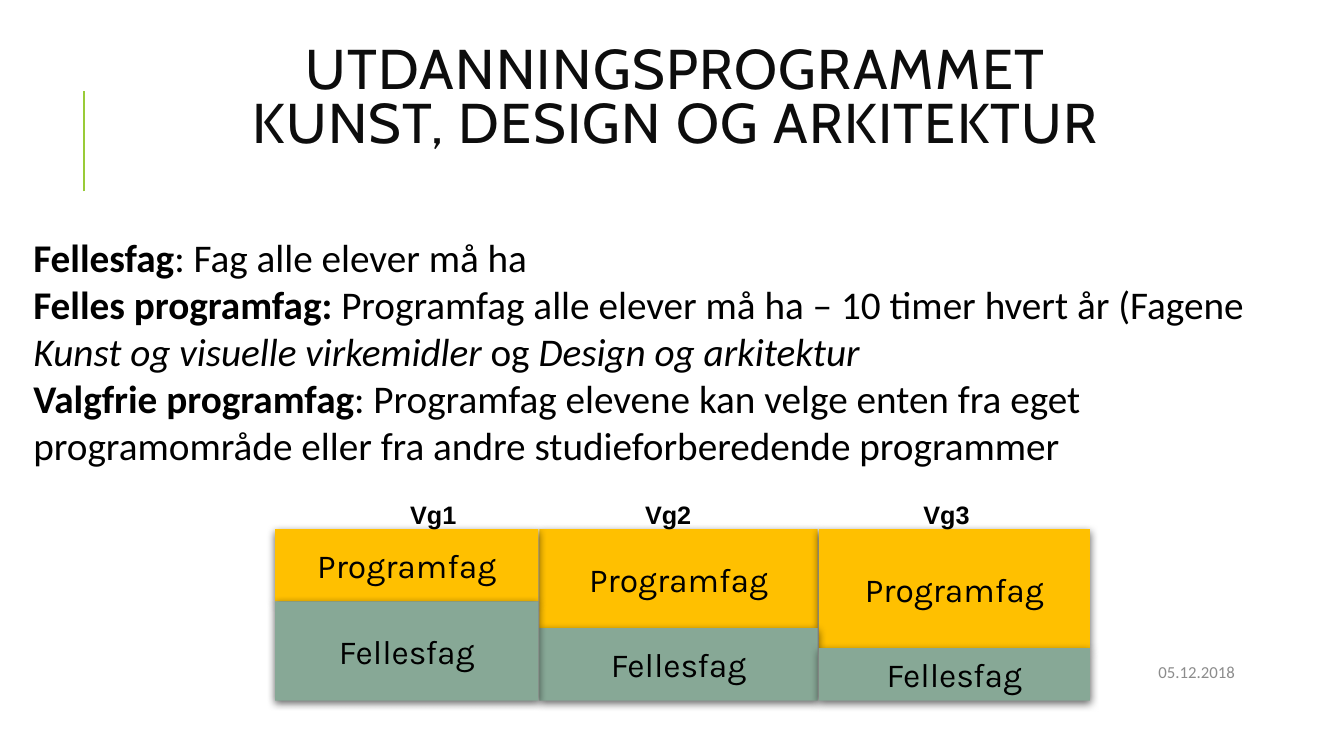
from dataclasses import dataclass

from lxml import etree
from pptx import Presentation
from pptx import util as u
from pptx.dml.color import RGBColor
from pptx.enum import shapes, text
from pptx.oxml import ns


@dataclass(frozen=True)
class Theme:
    black: str = "000000"
    title_ink: str = "0D0D0D"
    date_ink: str = "8C8C8C"
    accent: str = "99CB38"
    programme: str = "FFC000"
    common: str = "87A896"
    title_size: int = 40
    body_size: int = 28
    block_size: int = 24
    label_size: int = 18
    date_size: int = 12
    title_font: str = "Cabin"
    body_font: str = "Calibri"
    block_font: str = "Karla"
    label_font: str = "Arial"


@dataclass(frozen=True)
class Area:
    """A frame in percent of the slide's width and height."""
    left: float
    top: float
    width: float
    height: float


@dataclass(frozen=True)
class Year:
    """A school year: its column, its label and where its two blocks meet."""
    name: str
    left: float
    width: float
    split: float
    label_left: float


@dataclass(frozen=True)
class Piece:
    words: str
    bold: bool = False
    italic: bool = False


THEME = Theme()
SLIDE_WIDTH, SLIDE_HEIGHT = u.Inches(13.33), u.Inches(7.5)
BLOCKS_TOP, BLOCKS_BOTTOM = 70, 92.67

# Later years overlap earlier ones, and the first year lies on top
YEARS = [
    Year("Vg2", 40.14, 20.7, 83.07, 47.26),
    Year("Vg3", 60.92, 20.18, 85.73, 67.97),
    Year("Vg1", 20.48, 19.58, 79.55, 29.78),
]

DEFINITIONS = [
    [Piece("Fellesfag", bold=True), Piece(": Fag alle elever må ha")],
    [
        Piece("Felles programfag: ", bold=True),
        Piece("Programfag alle elever må ha – 10 timer hvert år (Fagene "),
        Piece("Kunst og visuelle virkemidler ", italic=True),
        Piece("og "),
        Piece("Design og arkitektur", italic=True),
    ],
    [
        Piece("Valgfrie programfag", bold=True),
        Piece(": Programfag elevene kan velge enten fra eget programområde "
              "eller fra andre studieforberedende programmer"),
    ],
]


def across(percent: float) -> int:
    return round(SLIDE_WIDTH * percent / 100)


def down(percent: float) -> int:
    return round(SLIDE_HEIGHT * percent / 100)


def frame(area: Area) -> tuple[int, int, int, int]:
    return across(area.left), down(area.top), across(area.width), down(area.height)


def place(box, area: Area) -> None:
    box.left, box.top, box.width, box.height = frame(area)


def style(font, name: str, size: int, ink: str, bold: bool = False, italic: bool = False) -> None:
    font.name, font.size = name, u.Pt(size)
    font.bold, font.italic = bold, italic
    font.color.rgb = RGBColor.from_string(ink)


def add_effects(properties, shadow: bool) -> None:
    effects = etree.SubElement(properties, ns.qn("a:effectLst"))
    if shadow:
        outer = etree.SubElement(effects, ns.qn("a:outerShdw"), blurRad=str(u.Pt(6)),
                                 dist=str(u.Pt(2)), dir="5400000", rotWithShape="0")
        colour = etree.SubElement(outer, ns.qn("a:srgbClr"), val=THEME.black)
        etree.SubElement(colour, ns.qn("a:alpha"), val="60000")


def add_accent(page) -> None:
    accent = page.shapes.add_connector(shapes.MSO_CONNECTOR.STRAIGHT, across(6.23),
                                       down(25.33), across(6.23), down(12))
    accent.line.color.rgb = RGBColor.from_string(THEME.accent)
    accent.line.width = u.Pt(1.5)
    add_effects(accent._element.spPr, shadow=False)


def add_label(page, words: str, area: Area, name: str, size: int, ink: str,
              bold: bool = False, wrap: bool = True) -> None:
    box = page.shapes.add_textbox(*frame(area))
    box.text_frame.word_wrap = wrap
    box.text_frame.vertical_anchor = text.MSO_ANCHOR.MIDDLE if wrap else text.MSO_ANCHOR.TOP
    box.text_frame.text = words
    style(box.text_frame.paragraphs[0].runs[0].font, name, size, ink, bold)


def add_block(page, words: str, area: Area, fill: str) -> None:
    block = page.shapes.add_shape(shapes.MSO_SHAPE.RECTANGLE, *frame(area))
    block.fill.solid()
    block.fill.fore_color.rgb = RGBColor.from_string(fill)
    block.line.fill.background()
    add_effects(block._element.spPr, shadow=True)
    block.text_frame.text = words
    block.text_frame.vertical_anchor = text.MSO_ANCHOR.MIDDLE
    para = block.text_frame.paragraphs[0]
    para.alignment = text.PP_ALIGN.CENTER
    style(para.runs[0].font, THEME.block_font, THEME.block_size, THEME.black)


def fill_title(title) -> None:
    place(title, Area(14.55, 6.93, 71.49, 12.67))
    title.text_frame.text = "UTDANNINGSPROGRAMMET KUNST, DESIGN OG ARKITEKTUR"
    title.text_frame.auto_size = text.MSO_AUTO_SIZE.NONE
    title.text_frame.vertical_anchor = text.MSO_ANCHOR.MIDDLE
    para = title.text_frame.paragraphs[0]
    para.alignment = text.PP_ALIGN.CENTER
    para.line_spacing = 0.8
    span = para.runs[0]
    style(span.font, THEME.title_font, THEME.title_size, THEME.title_ink)
    span.font._element.set("spc", "100")


def fill_definitions(body) -> None:
    place(body, Area(1.73, 30.13, 91.97, 32.8))
    body.text_frame.auto_size = text.MSO_AUTO_SIZE.NONE
    for index, pieces in enumerate(DEFINITIONS):
        para = body.text_frame.paragraphs[0] if index == 0 else body.text_frame.add_paragraph()
        para.space_before = u.Pt(0)
        properties = para._p.get_or_add_pPr()
        properties.set("marL", "0")
        properties.set("indent", "0")
        etree.SubElement(properties, ns.qn("a:buNone"))
        for piece in pieces:
            span = para.add_run()
            span.text = piece.words
            style(span.font, THEME.body_font, THEME.body_size, THEME.black,
                  piece.bold, piece.italic)


def main() -> None:
    deck = Presentation()
    deck.slide_width, deck.slide_height = SLIDE_WIDTH, SLIDE_HEIGHT
    page = deck.slides.add_slide(deck.slide_layouts[1])

    # Title, definitions, accent line and date
    fill_title(page.shapes.title)
    fill_definitions(page.placeholders[1])
    add_accent(page)
    add_label(page, "05.12.2018", Area(85.45, 86.13, 12.15, 5.33),
              THEME.body_font, THEME.date_size, THEME.date_ink)

    # Blocks: programme subjects above, common subjects below
    for year in YEARS:
        add_block(page, "Programfag", Area(year.left, BLOCKS_TOP, year.width,
                                           year.split - BLOCKS_TOP), THEME.programme)
    for year in YEARS:
        add_block(page, "Fellesfag", Area(year.left, year.split, year.width,
                                          BLOCKS_BOTTOM - year.split), THEME.common)

    # Year labels
    for year in YEARS:
        add_label(page, year.name, Area(year.label_left, 65.33, 4.95, 5.33),
                  THEME.label_font, THEME.label_size, THEME.black, bold=True, wrap=False)

    deck.save("out.pptx")


if __name__ == "__main__":
    main()
